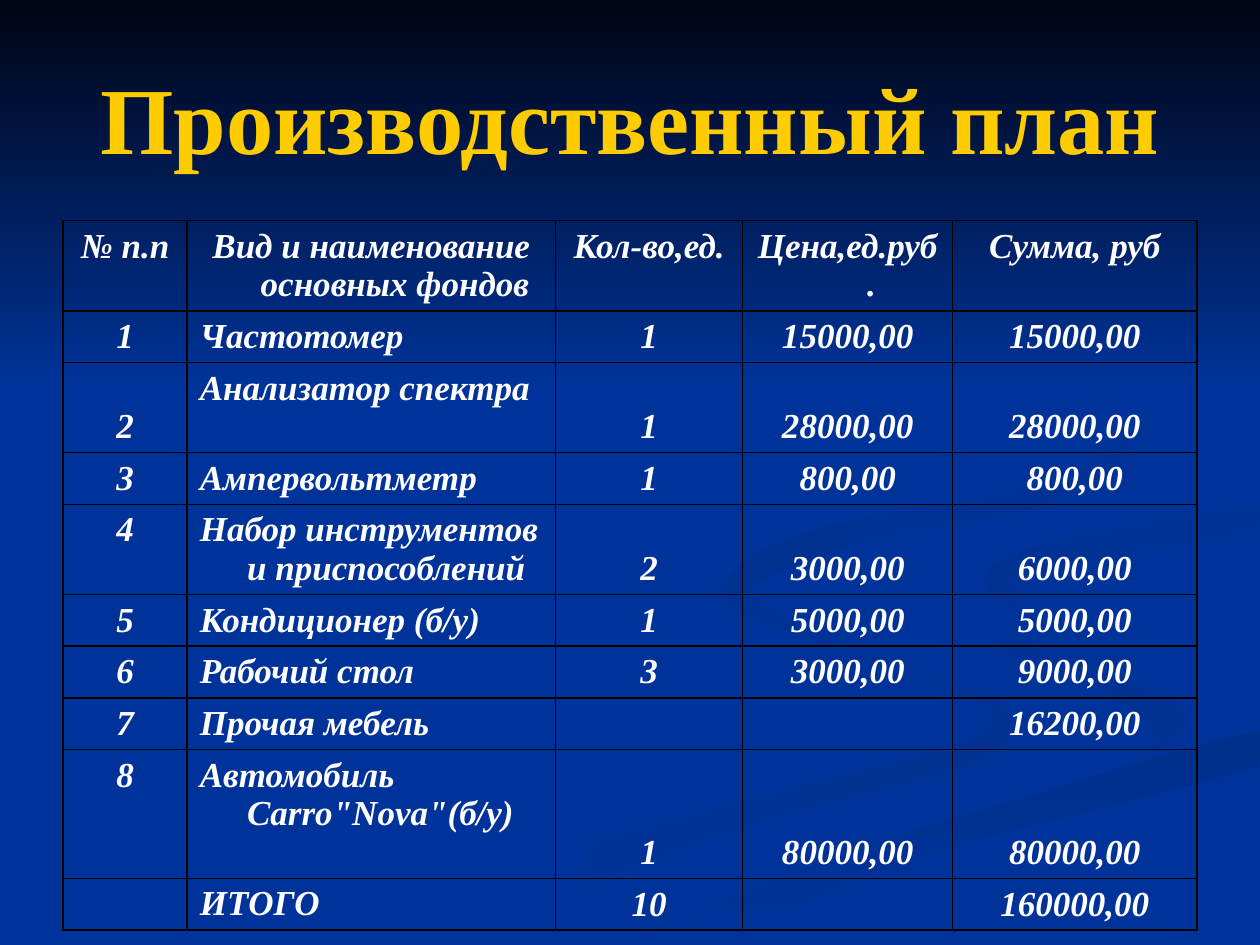
from lxml import etree
from pptx import Presentation
from pptx.dml.color import RGBColor
from pptx.enum import text as t
from pptx.oxml.ns import qn
from pptx.util import Pt

BLUE = RGBColor.from_string("003399")
NIGHT = RGBColor.from_string("000514")
DEEP = RGBColor.from_string("003193")
DARK = RGBColor.from_string("002F8C")
SHADE = RGBColor.from_string("003091")
GOLD = RGBColor.from_string("FFCC00")
WHITE = RGBColor.from_string("FFFFFF")
BLACK = RGBColor.from_string("000000")

FACE = "Times New Roman"
HEAD = {"name": FACE, "size": Pt(54), "bold": True}
BODY = {"name": FACE, "size": Pt(20), "bold": True, "italic": True}

CURVES = [
    (BLUE, DEEP, 0, [
        (562, 398), (476, 369), (414, 330), (422, 351), (534, 388),
        (562, 417), (444, 453), (330, 485), (216, 539), (260, 539),
        (406, 479), (554, 438), (576, 418)]),
    (BLUE, DEEP, 45, [
        (679, 410), (612, 377), (536, 353), (521, 334), (532, 356),
        (625, 392), (660, 421), (644, 436)]),
    (DARK, BLUE, 90, [
        (362, 539), (411, 539), (520, 491), (719, 438), (719, 418),
        (574, 459), (454, 499)]),
    (SHADE, BLUE, 45, [
        (562, 331), (595, 357), (580, 340), (607, 323), (719, 302),
        (719, 289), (601, 310)]),
    (DARK, BLUE, 45, [
        (492, 310), (606, 285), (643, 241), (549, 168), (640, 241),
        (589, 278), (467, 302), (415, 333), (448, 360), (427, 338)]),
]

COLS = [71, 210.5, 107, 120, 139.5]
ROWS = [
    (2, "№ п.п", "Вид и наименование основных фондов", "Кол-во,ед.",
     "Цена,ед.руб.", "Сумма, руб"),
    (1, "1", "Частотомер", "1", "15000,00", "15000,00"),
    (2, "2", "Анализатор спектра", "1", "28000,00", "28000,00"),
    (1, "3", "Ампервольтметр", "1", "800,00", "800,00"),
    (2, "4", "Набор инструментов и приспособлений", "2", "3000,00", "6000,00"),
    (1, "5", "Кондиционер (б/у)", "1", "5000,00", "5000,00"),
    (1, "6", "Рабочий стол", "3", "3000,00", "9000,00"),
    (1, "7", "Прочая мебель", "", "", "16200,00"),
    (3, "8", "Автомобиль Carro\"Nova\"(б/у)", "1", "80000,00", "80000,00"),
    (1, "", "ИТОГО", "10", "", "160000,00"),
]


def style(font, form, tint):
    for key, val in form.items():
        setattr(font, key, val)
    font.color.rgb = tint


def bend(a, b, c, d, step):
    return (b + (c - a) * step / 2
            + (2 * a - 5 * b + 4 * c - d) * step ** 2 / 2
            + (3 * b - a - 3 * c + d) * step ** 3 / 2)


def smooth(dots, box):
    left, top, width, height = box
    count, parts = len(dots), 6
    for i in range(count):
        near = [dots[(i + k) % count] for k in (-1, 0, 1, 2)]
        xs, ys = zip(*near)
        for part in range(parts):
            step = part / parts
            yield (left + min(bend(*xs, step), width),
                   top + min(bend(*ys, step), height))


def shade(shape, tints, angle):
    shape.shadow.inherit = False
    shape.line.fill.background()
    shape.fill.gradient()
    shape.fill.gradient_angle = -angle % 360
    for stop, tint in zip(shape.fill.gradient_stops, tints):
        stop.color.rgb = tint


def draw_back(slide, box):
    left, top, width, _ = box
    for first, last, angle, dots in CURVES:
        spots = list(smooth(dots, box))
        pen = slide.shapes.build_freeform(*spots[0], scale=Pt(1))
        pen.add_line_segments(spots[1:], close=True)
        shade(pen.convert_to_shape(), (first, last), angle)
    right, base = left + width, top + 222
    pen = slide.shapes.build_freeform(left, top, scale=Pt(1))
    pen.add_line_segments([(left, base), (right, base), (right, top)])
    shade(pen.convert_to_shape(), (NIGHT, BLUE), 90)


def place_title(slide, box):
    title = slide.shapes.title
    slide.shapes._spTree.append(title._element)
    for key, val in zip(("left", "top", "width", "height"), box):
        setattr(title, key, Pt(val))
    frame = title.text_frame
    frame.text = "Производственный план"
    frame.vertical_anchor = t.MSO_ANCHOR.MIDDLE
    para = frame.paragraphs[0]
    para.alignment = t.PP_ALIGN.CENTER
    style(para.runs[0].font, HEAD, GOLD)


def edge_cell(cell):
    props = cell._tc.get_or_add_tcPr()
    for side in ("lnL", "lnR", "lnT", "lnB"):
        line = etree.SubElement(props, qn("a:" + side), w=str(Pt(1)))
        fill = etree.SubElement(line, qn("a:solidFill"))
        etree.SubElement(fill, qn("a:srgbClr"), val=str(BLACK))
    cell.fill.background()


def fill_cell(cell, words, row, col):
    edge_cell(cell)
    high = row == 0 or col == 1 or (col == 0 and row != 2)
    cell.vertical_anchor = t.MSO_ANCHOR.TOP if high else t.MSO_ANCHOR.BOTTOM
    para = cell.text_frame.paragraphs[0]
    left = col == 1 and row > 0
    para.alignment = t.PP_ALIGN.LEFT if left else t.PP_ALIGN.CENTER
    props = para._p.get_or_add_pPr()
    props.set("marL", str(Pt(27)))
    props.set("indent", str(Pt(-27)))
    if words:
        run = para.add_run()
        run.text = words
        style(run.font, BODY, WHITE)


def place_table(slide, box):
    frame = slide.shapes.add_table(len(ROWS), len(COLS), *map(Pt, box))
    table = frame.table
    table.first_row = table.horz_banding = False
    for col, width in zip(table.columns, COLS):
        col.width = Pt(width)
    for i, (lines, *words) in enumerate(ROWS):
        table.rows[i].height = Pt(7.4 + 22.1 * lines)
        for j, word in enumerate(words):
            fill_cell(table.cell(i, j), word, i, j)


def main():
    deck = Presentation()
    deck.slide_width, deck.slide_height = Pt(720), Pt(540)
    slide = deck.slides.add_slide(deck.slide_layouts[5])
    slide.background.fill.solid()
    slide.background.fill.fore_color.rgb = BLUE
    draw_back(slide, (0, 0, 720, 540))
    place_title(slide, (36, 21.6, 648, 90))
    place_table(slide, (36, 126, 648, 405.5))
    deck.save("out.pptx")


if __name__ == "__main__":
    main()
